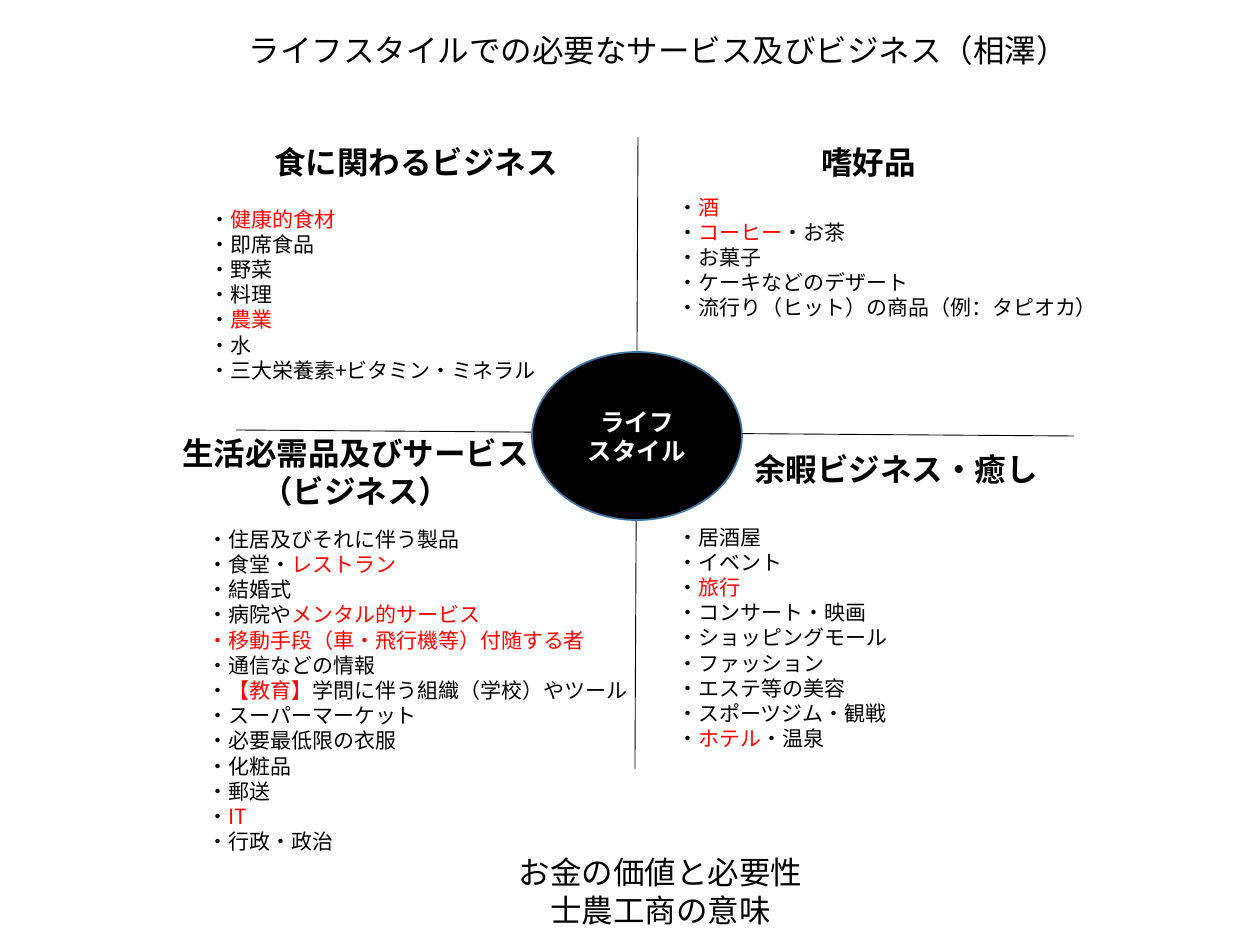
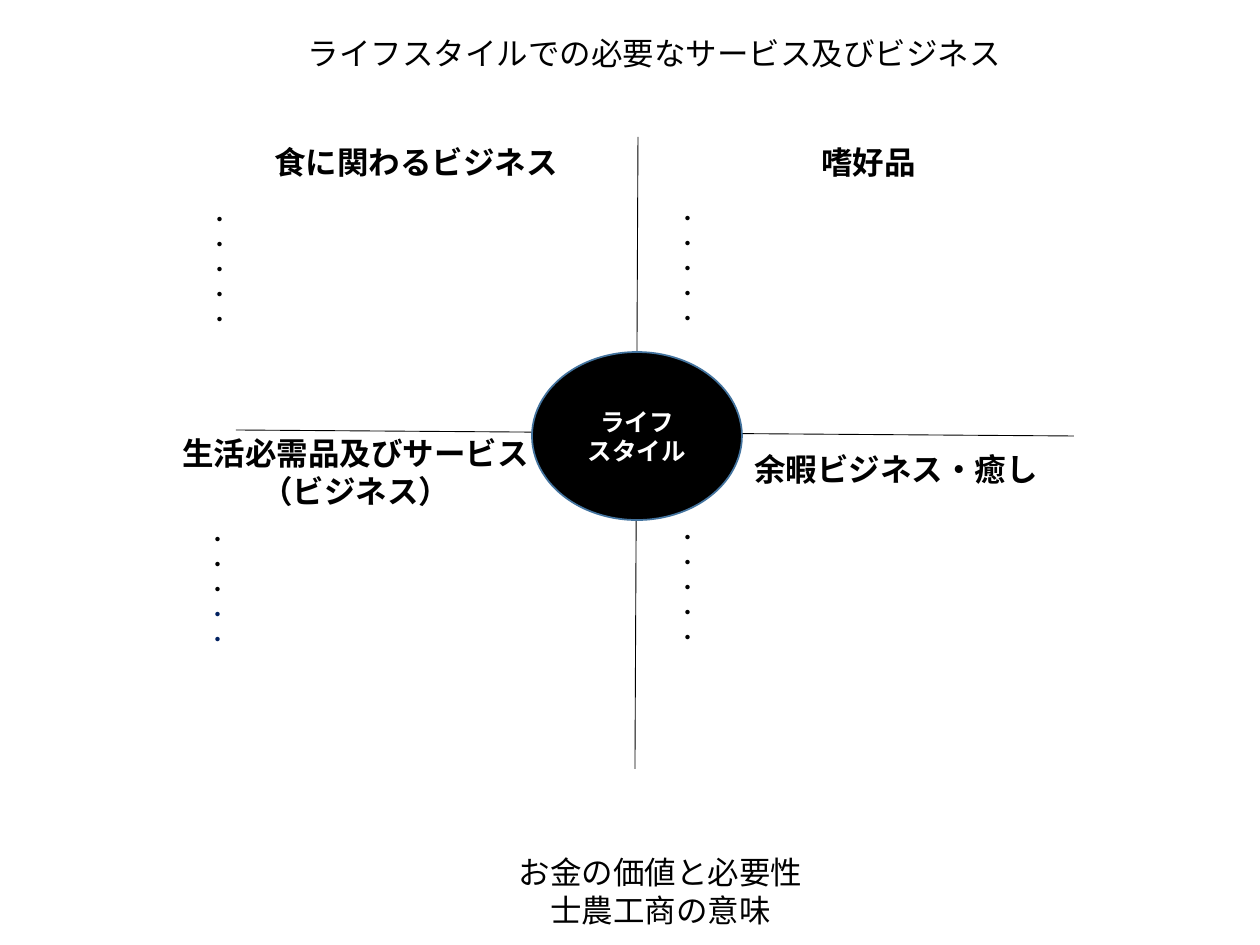
import pptx
import pptx.util
import pptx.dml.color
import pptx.enum.shapes
import pptx.enum.text
import pptx.oxml.ns
from lxml import etree

BLACK = pptx.dml.color.RGBColor(0x00, 0x00, 0x00)
WHITE = pptx.dml.color.RGBColor(0xFF, 0xFF, 0xFF)
RED = pptx.dml.color.RGBColor(0xFF, 0x00, 0x00)
NAVY = pptx.dml.color.RGBColor(0x00, 0x20, 0x60)
EDGE = pptx.dml.color.RGBColor(0x43, 0x73, 0x9E)
GOTHIC = "Noto Sans CJK JP"
LATIN = "Calibri"
LEFT = pptx.enum.text.PP_ALIGN.LEFT
CENTER = pptx.enum.text.PP_ALIGN.CENTER
TOP = pptx.enum.text.MSO_ANCHOR.TOP
MIDDLE = pptx.enum.text.MSO_ANCHOR.MIDDLE
LINE_HEIGHT = 1.2


def px(*values):
    return [round(v * 914400 / 126) for v in values]


def write(sp, lines, size=18, font=GOTHIC, bold=False, color=BLACK,
          accent=RED, align=LEFT, anchor=TOP):
    tf = sp.text_frame
    tf.word_wrap = True
    tf.auto_size = pptx.enum.text.MSO_AUTO_SIZE.NONE
    tf.vertical_anchor = anchor
    for i, line in enumerate(lines):
        p = tf.add_paragraph() if i else tf.paragraphs[0]
        p.alignment = align
        p.line_spacing = pptx.util.Pt(size * LINE_HEIGHT)
        for j, part in enumerate(line.split("|")):
            if not part:
                continue
            r = p.add_run()
            r.text = part
            r.font.size = pptx.util.Pt(size)
            r.font.bold = bold
            r.font.name = font
            r.font.color.rgb = accent if j % 2 else color
            ea = etree.SubElement(r.font._element, pptx.oxml.ns.qn("a:ea"))
            ea.set("typeface", GOTHIC)


AXES = [(236, 430, 1074, 436), (635, 769, 638, 137)]

HEADINGS = [
    ("嗜好品", (809, 137, 289, 50), LATIN, LEFT),
    ("食に関わるビジネス", (262, 137, 320, 50), LATIN, LEFT),
    ("生活必需品及びサービス（ビジネス）", (169, 428, 373, 89), LATIN, CENTER),
    ("余暇ビジネス・癒し", (742, 444, 417, 50), GOTHIC, LEFT),
]

FOOD = ["・|健康的食材|", "・即席食品", "・野菜", "・料理", "・|農業|", "・水",
        "・三大栄養素+ビタミン・ミネラル"]
TREATS = ["・|酒|", "・|コーヒー|・お茶", "・お菓子", "・ケーキなどのデザート",
          "・流行り（ヒット）の商品（例：タピオカ）"]
LEISURE = ["・居酒屋", "・イベント", "・|旅行|", "・コンサート・映画",
           "・ショッピングモール", "・ファッション", "・エステ等の美容",
           "・スポーツジム・観戦", "・|ホテル|・温泉"]
NEEDS = ["・住居及びそれに伴う製品", "・食堂・|レストラン|", "・結婚式",
         "・病院や|メンタル的サービス|", "|・移動手段（車・飛行機等）付随する者|",
         "・通信などの情報", "・|【教育】|学問に伴う組織（学校）やツール",
         "・スーパーマーケット", "・必要最低限の衣服", "・化粧品", "・郵送",
         "・|IT|", "・行政・政治"]
BLANK = ["・"] * 5
BLANK_NEEDS = ["・"] * 3 + ["|・|"] * 2

SLIDES = [
    ("ライフスタイルでの必要なサービス及びビジネス（相澤）", (236, 25, 883, 50), RED, [
        (FOOD, (197, 200, 440, 190)),
        (TREATS, (665, 188, 459, 140)),
        (LEISURE, (665, 518, 440, 292)),
        (NEEDS, (195, 520, 460, 344)),
    ]),
    ("ライフスタイルでの必要なサービス及びビジネス", (295, 28, 762, 50), NAVY, [
        (BLANK, (197, 200, 440, 190)),
        (BLANK, (665, 199, 459, 140)),
        (BLANK, (665, 518, 440, 217)),
        (BLANK_NEEDS, (195, 520, 460, 165)),
    ]),
]

prs = pptx.Presentation()
prs.slide_width, prs.slide_height = px(1260, 945)

for title, box, accent, lists in SLIDES:
    s = prs.slides.add_slide(prs.slide_layouts[5])
    sp = s.shapes.title
    sp.left, sp.top, sp.width, sp.height = px(*box)
    write(sp, [title])

    for ends in AXES:
        line = s.shapes.add_connector(
            pptx.enum.shapes.MSO_CONNECTOR.STRAIGHT, *px(*ends))
        line.line.color.rgb = BLACK
        line.line.width = pptx.util.Pt(0.5)
        etree.SubElement(line._element.spPr, pptx.oxml.ns.qn("a:effectLst"))

    sp = s.shapes.add_shape(
        pptx.enum.shapes.MSO_SHAPE.OVAL, *px(532, 352, 210, 168))
    sp.shadow.inherit = False
    sp.fill.solid()
    sp.fill.fore_color.rgb = BLACK
    sp.line.color.rgb = EDGE
    sp.line.width = pptx.util.Pt(1)
    write(sp, ["ライフ", "スタイル"], size=14, bold=True, color=WHITE,
          align=CENTER, anchor=MIDDLE)

    for text, box, font, align in HEADINGS:
        write(s.shapes.add_textbox(*px(*box)), [text], font=font, bold=True,
              align=align)

    for items, box in lists:
        write(s.shapes.add_textbox(*px(*box)), items, size=12, accent=accent)

    write(s.shapes.add_textbox(*px(486, 847, 349, 89)),
          ["お金の価値と必要性", "士農工商の意味"], align=CENTER)

prs.save("out.pptx")
